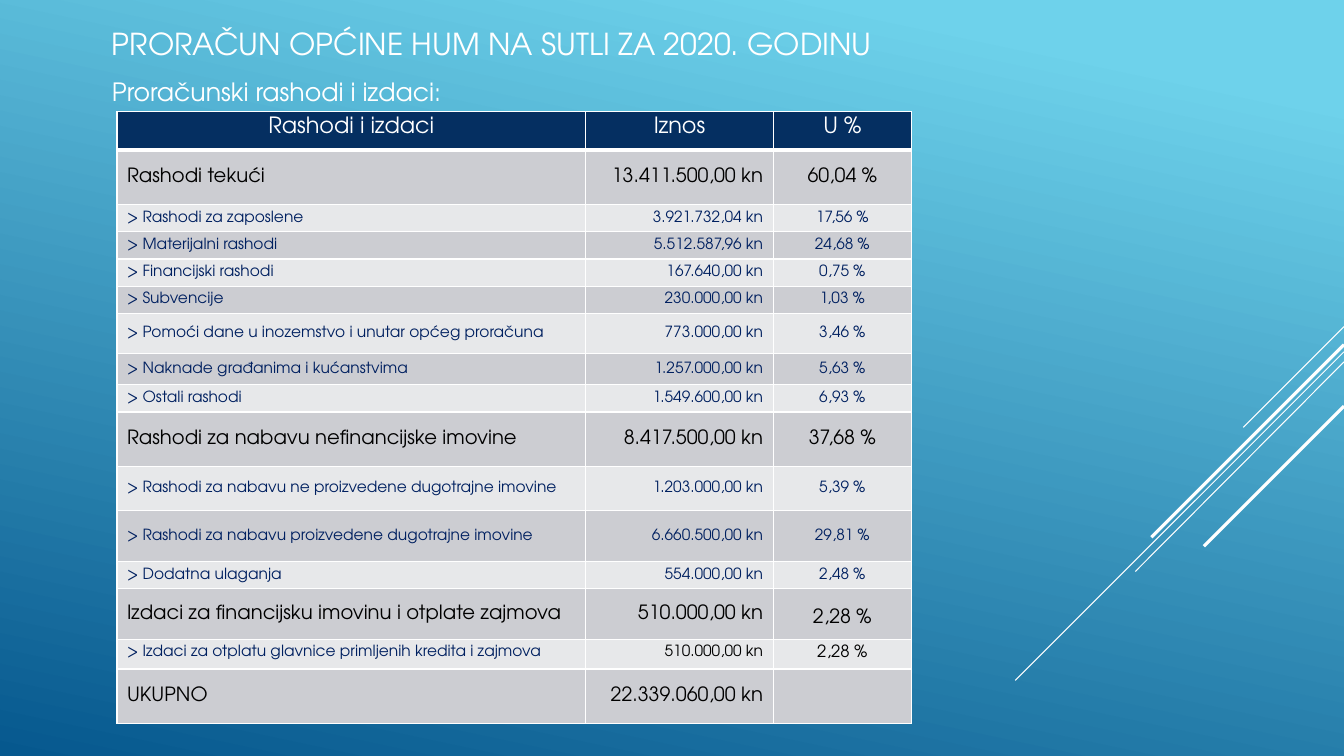
"""Build the slide with the 2020 municipal budget expenditure table."""
from lxml.etree import SubElement
from pptx import Presentation
from pptx.dml.color import RGBColor
from pptx.enum.shapes import MSO_CONNECTOR
from pptx.enum.text import MSO_ANCHOR, MSO_AUTO_SIZE, PP_ALIGN
from pptx.oxml.ns import qn
from pptx.util import Pt

PX = 9144
FONT = "TeX Gyre Adventor"
WHITE, BLACK, NAVY = "FFFFFF", "000000", "002060"
HEADER_FILL, DARK_FILL, LIGHT_FILL = "052F61", "CCCDD2", "E7E8EA"


def rgb(value):
    """Turn a hex string into a colour."""
    return RGBColor.from_string(value)


def write(frame, text, size, color, align=PP_ALIGN.LEFT):
    """Put one formatted run into a text frame and return its paragraph."""
    para = frame.paragraphs[0]
    para.alignment = align
    span = para.add_run()
    span.text = text
    span.font.name = FONT
    span.font.size = Pt(size)
    span.font.bold = False
    span.font.color.rgb = rgb(color)
    return para


deck = Presentation()
deck.slide_width, deck.slide_height = 1333 * PX, 750 * PX
page = deck.slides.add_slide(deck.slide_layouts.get_by_name("Section Header"))

backdrop = page.background.fill
backdrop.gradient()
backdrop.gradient_angle = 258
for stop, position, color in zip(backdrop.gradient_stops, (0.1, 1), ("6ED2EB", "06588E")):
    stop.position = position
    stop.color.rgb = rgb(color)

diagonals = [
    (324, 1233, 424, 0.75),
    (349, 1007, 675, 0.75),
    (359, 1126, 567, 0.75),
    (342, 1142, 533, 2.25),
    (403, 1194, 542, 2.25),
]
for start_y, end_x, end_y, weight in diagonals:
    diagonal = page.shapes.add_connector(
        MSO_CONNECTOR.STRAIGHT, 1333 * PX, start_y * PX, end_x * PX, end_y * PX)
    diagonal.line.color.rgb = rgb(WHITE)
    diagonal.line.width = Pt(weight)
    SubElement(diagonal.element.spPr, qn("a:effectLst"))

headings = [
    (page.shapes.title, (101, 17, 928, 53), MSO_ANCHOR.MIDDLE,
     "PRORAČUN OPĆINE HUM NA SUTLI ZA 2020. GODINU", 21.6),
    (page.placeholders[1], (101, 48, 509, 63), MSO_ANCHOR.BOTTOM,
     "Proračunski rashodi i izdaci:", 18),
]
for box, place, anchor, text, size in headings:
    box.left, box.top, box.width, box.height = [length * PX for length in place]
    box.text_frame.auto_size = MSO_AUTO_SIZE.NONE
    box.text_frame.word_wrap = True
    box.text_frame.vertical_anchor = anchor
    para = write(box.text_frame, text, size, WHITE)
    para.space_before = Pt(0)

budget = [
    (38, "Rashodi i izdaci", "Iznos", "U %"),
    (54, "Rashodi tekući", "13.411.500,00 kn", "60,04 %"),
    (27, "> Rashodi za zaposlene", "3.921.732,04 kn", "17,56 %"),
    (27, "> Materijalni rashodi", "5.512.587,96 kn", "24,68 %"),
    (27, "> Financijski rashodi", "167.640,00 kn", "0,75 %"),
    (27, "> Subvencije", "230.000,00 kn", "1,03 %"),
    (40, "> Pomoći dane u inozemstvo i unutar općeg proračuna", "773.000,00 kn", "3,46 %"),
    (31, "> Naknade građanima i kućanstvima", "1.257.000,00 kn", "5,63 %"),
    (27, "> Ostali rashodi", "1.549.600,00 kn", "6,93 %"),
    (54, "Rashodi za nabavu nefinancijske imovine", "8.417.500,00 kn", "37,68 %"),
    (44, "> Rashodi za nabavu ne proizvedene dugotrajne imovine", "1.203.000,00 kn", "5,39 %"),
    (50, "> Rashodi za nabavu proizvedene dugotrajne imovine", "6.660.500,00 kn", "29,81 %"),
    (27, "> Dodatna ulaganja", "554.000,00 kn", "2,48 %"),
    (51, "Izdaci za financijsku imovinu i otplate zajmova", "510.000,00 kn", "2,28 %"),
    (29, "> Izdaci za otplatu glavnice primljenih kredita i zajmova", "510.000,00 kn", "2,28 %"),
    (54, "UKUPNO", "22.339.060,00 kn", ""),
]
LOAN_TOTAL, LOAN_DETAIL = 13, 14
column_widths = (465, 186, 137)
column_aligns = (PP_ALIGN.LEFT, PP_ALIGN.RIGHT, PP_ALIGN.CENTER)
table = page.shapes.add_table(
    len(budget), 3, 116 * PX, 111 * PX,
    sum(column_widths) * PX, sum(row[0] for row in budget) * PX).table
for column, width in zip(table.columns, column_widths):
    column.width = width * PX

for r, (height, *texts) in enumerate(budget):
    table.rows[r].height = height * PX
    for c, text in enumerate(texts):
        cell = table.cell(r, c)
        cell.margin_top = cell.margin_bottom = 0
        cell.vertical_anchor = MSO_ANCHOR.MIDDLE
        if r in (0, LOAN_DETAIL):
            cell.vertical_anchor = MSO_ANCHOR.TOP
            cell.margin_top = 5 * PX

        for side in "LRTB":
            thick = (r, side) in ((0, "B"), (1, "T"))
            border = SubElement(cell._tc.get_or_add_tcPr(), qn(f"a:ln{side}"),
                                w=str(Pt(3 if thick else 1)))
            paint = SubElement(border, qn("a:solidFill"))
            SubElement(paint, qn("a:srgbClr"), val=WHITE)

        fill, size, color, align = DARK_FILL, 14, BLACK, column_aligns[c]
        if r == 0:
            fill, size, color, align = HEADER_FILL, 16, WHITE, PP_ALIGN.CENTER
        elif texts[0].startswith(">"):
            size, color = 11, NAVY
        if r and r % 2 == 0:
            fill = LIGHT_FILL
        if r == LOAN_DETAIL and c > 0:
            size, color = 10 + c, BLACK
        if r == LOAN_TOTAL and c == 2:
            cell.margin_top = 8 * PX
        cell.fill.solid()
        cell.fill.fore_color.rgb = rgb(fill)
        if text:
            write(cell.text_frame, text, size, color, align)

deck.save("out.pptx")
